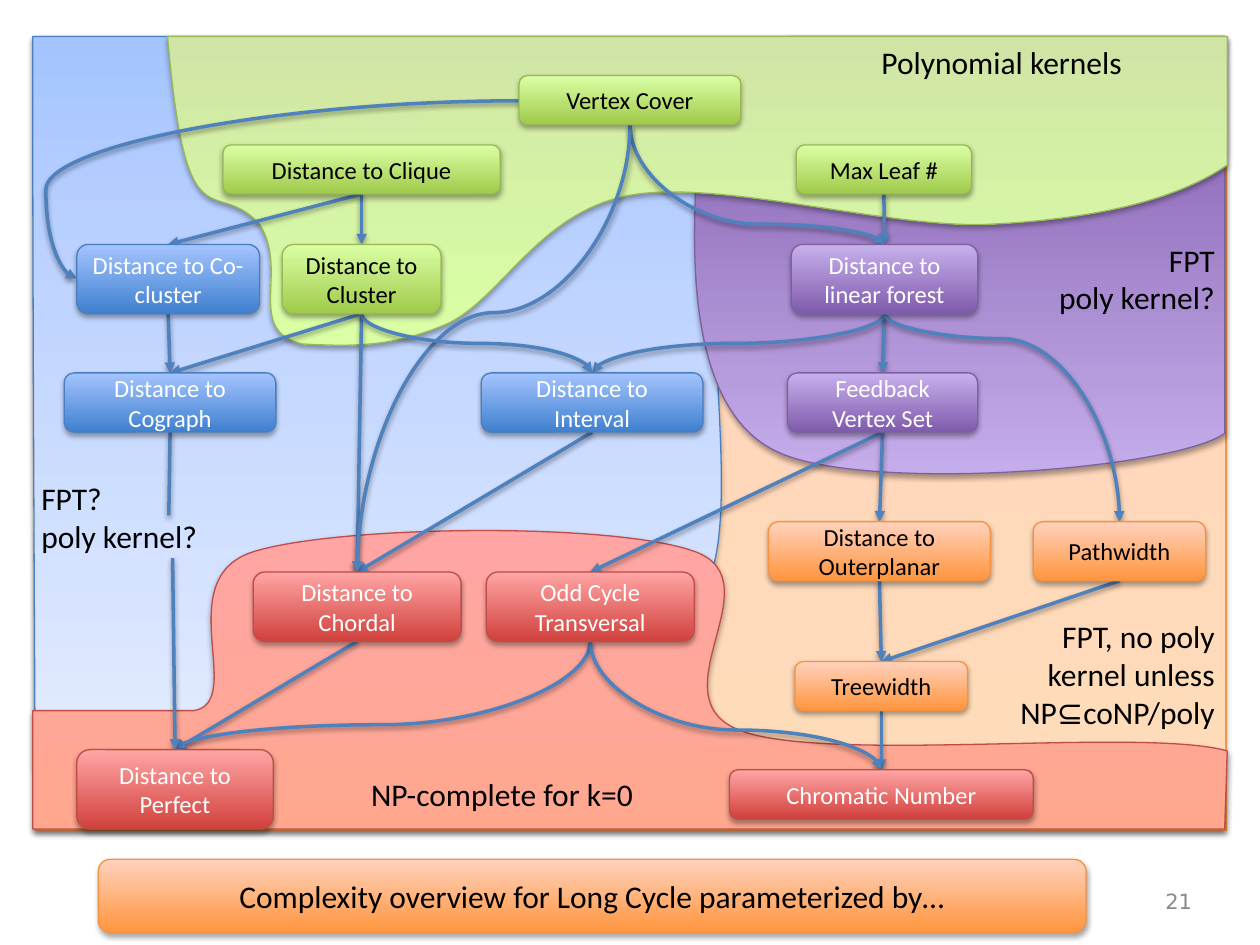
from collections import namedtuple

from lxml.etree import SubElement
from pptx import Presentation
from pptx.dml.color import RGBColor
from pptx.enum.shapes import MSO_CONNECTOR, MSO_SHAPE
from pptx.enum.text import MSO_ANCHOR, PP_ALIGN
from pptx.oxml.ns import qn
from pptx.util import Inches, Pt

COLS, ROWS = 10, 7.5
UP, DOWN = 90, 270
LEFT, MID, RIGHT = PP_ALIGN.LEFT, PP_ALIGN.CENTER, PP_ALIGN.RIGHT

# Tone: gradient start, gradient end, outline, text
TONES = {
    "green": ("A0CA4A", "DAFFA5", "98B955", "000000"),
    "blue": ("3F80CE", "A4C4FF", "4B7EBC", "FFFFFF"),
    "purple": ("7F5BAB", "C8B0ED", "7D60A0", "FFFFFF"),
    "orange": ("FF953E", "FFD2BD", "F69240", "000000"),
    "red": ("D1403C", "FFA6A5", "BF4C48", "FFFFFF"),
}

# Region: tone, gradient stops, direction, start, then lines (2) and curves (6)
REGIONS = [
    ("blue", [(0, "A4C4FF"), (35, "BFD4FF"), (100, "E6EEFF")], DOWN, (9.72, 1.23),
     [(9.72, 0.66, 9.72, 0.86, 9.72, 0.29), (0.26, 0.29),
      (0.26, 2.23, 0.27, 4.17, 0.28, 6.11), (0.95, 6.3, 3.47, 6.22, 4.37, 5.95),
      (5.27, 5.69, 5.4, 5.34, 5.65, 4.54), (5.9, 3.74, 5.41, 1.7, 5.88, 1.15),
      (6.35, 0.6, 8.02, 1.3, 8.45, 1.23)]),
    ("purple", [(0, "7F5BAB"), (100, "C8B0ED")], DOWN, (9.72, 3.44),
     [(9.72, 2.93, 9.72, 0.79, 9.72, 0.29), (6.28, 0.29),
      (5.49, 0.5, 5.53, 0.99, 5.52, 1.55), (5.5, 2.1, 5.48, 3.28, 6.18, 3.59),
      (6.88, 3.91, 9.3, 3.73, 9.72, 3.44)]),
    ("green", [(0, "D0E5A5"), (100, "DAFFA5")], DOWN, (9.74, 1.31),
     [(9.74, 0.81, 9.74, 0.79, 9.74, 0.29), (1.33, 0.29),
      (1.48, 2.01, 1.7, 1.38, 2.06, 1.78), (2.3, 2.15, 1.94, 2.62, 2.4, 2.73),
      (2.78, 2.75, 3.11, 2.76, 3.55, 2.57), (3.98, 2.37, 4.28, 1.68, 5, 1.55),
      (5.72, 1.42, 7.07, 1.82, 7.86, 1.78), (8.65, 1.74, 9.32, 1.6, 9.74, 1.31)]),
    ("red", [(0, "FFA78F"), (100, "FFA6A5")], UP, (0.26, 5.64),
     [(0.26, 6.21, 0.26, 6.01, 0.26, 6.58), (9.72, 6.58), (9.74, 5.96),
      (9.07, 5.77, 6.58, 6.06, 5.88, 5.8), (5.18, 5.54, 6.16, 4.62, 5.52, 4.38),
      (4.87, 4.14, 2.67, 4.17, 2.01, 4.38), (1.34, 4.59, 1.96, 5.57, 1.54, 5.64)]),
]

# Level: top, height, then nodes as (text, tone, left, width)
LEVELS = [
    (0.6, 0.39, [("Vertex Cover", "green", 4.12, 1.76)]),
    (1.15, 0.39, [("Distance to Clique", "green", 1.77, 2.2),
                  ("Max Leaf #", "green", 6.32, 1.39)]),
    (1.94, 0.55, [("Distance to Co-cluster", "blue", 0.61, 1.45),
                  ("Distance to Cluster", "green", 2.24, 1.26),
                  ("Distance to linear forest", "purple", 6.28, 1.48)]),
    (2.96, 0.47, [("Distance to Cograph", "blue", 0.51, 1.68),
                  ("Distance to Interval", "blue", 3.82, 1.76),
                  ("Feedback Vertex Set", "purple", 6.25, 1.51)]),
    (4.14, 0.47, [("Distance to Outerplanar", "orange", 6.1, 1.76),
                  ("Pathwidth", "orange", 8.2, 1.37)]),
    (4.54, 0.55, [("Distance to Chordal", "red", 2.01, 1.65),
                  ("Odd Cycle Transversal", "red", 3.86, 1.65)]),
    (5.25, 0.39, [("Treewidth", "orange", 6.31, 1.37)]),
    (5.95, 0.63, [("Distance to Perfect", "red", 0.61, 1.56)]),
    (6.11, 0.39, [("Chromatic Number", "red", 5.79, 2.41)]),
]

# Links name nodes by their last word
STRAIGHT = [
    ("forest", "Set"), ("Cluster", "Chordal"), ("Set", "Outerplanar"),
    ("Treewidth", "Number"), ("Interval", "Chordal"), ("Set", "Transversal"),
    ("Chordal", "Perfect"), ("Co-cluster", "Cograph"), ("Outerplanar", "Treewidth"),
    ("Pathwidth", "Treewidth"), ("Cluster", "Cograph"), ("Clique", "Cluster"),
    ("Clique", "Co-cluster"), ("#", "forest"),
]
CURVED = [
    ("Transversal", "Perfect", 0.77), ("forest", "Interval", 0.5),
    ("Transversal", "Number", 0.69), ("Cover", "forest", 0.83),
    ("forest", "Pathwidth", 0.12), ("Cover", "Chordal", 0.42),
    ("Cluster", "Interval", 0.5),
]

LABELS = [
    ("Polynomial kernels", MID, (6.18, 0.29, 3.54, 0.4)),
    ("NP-complete for k=0", MID, (2.32, 6.1, 3.33, 0.4)),
    ("FPT, no poly\nkernel unless\nNP⊆coNP/poly", RIGHT, (6.18, 4.85, 3.56, 1.01)),
    ("FPT\npoly kernel?", RIGHT, (6.18, 1.86, 3.56, 0.71)),
    ("FPT?\npoly kernel?", LEFT, (0.23, 3.75, 3.56, 0.71)),
]


class Grid(namedtuple("Grid", "x y w h")):
    """Columns and rows laid over a box."""

    def spot(self, col, row):
        return (int(self.x + self.w * col / COLS), int(self.y + self.h * row / ROWS))

    def cell(self, col, row, wide, high):
        return (*self.spot(col, row), int(self.w * wide / COLS), int(self.h * high / ROWS))


def tint(code):
    return RGBColor.from_string(code)


def shade(shape, alpha=35, dist=1.8):
    """Give a soft drop shadow."""
    fx = SubElement(shape.element.spPr, qn("a:effectLst"))
    drop = SubElement(fx, qn("a:outerShdw"), blurRad=str(Pt(3.1)), dist=str(Pt(dist)),
                      dir="5400000", rotWithShape="0")
    black = SubElement(drop, qn("a:srgbClr"), val="000000")
    SubElement(black, qn("a:alpha"), val=str(alpha * 1000))


def paint(shape, stops, edge, turn=UP):
    shape.fill.gradient()
    shape.fill.gradient_angle = turn
    marks = shape.element.spPr.find(qn("a:gradFill")).find(qn("a:gsLst"))
    marks.clear()
    for pos, code in stops:
        mark = SubElement(marks, qn("a:gs"), pos=str(pos * 1000))
        SubElement(mark, qn("a:srgbClr"), val=code)
    shape.line.color.rgb = tint(edge)
    shape.line.width = Pt(0.75)
    shade(shape)


def write(shape, text, size=18, color="000000", font="Calibri", align=MID,
          anchor=MSO_ANCHOR.MIDDLE):
    frame = shape.text_frame
    frame.word_wrap = True
    frame.vertical_anchor = anchor
    frame.text = text
    for para in frame.paragraphs:
        para.alignment = align
        para.font.size, para.font.name = Pt(size), font
        para.font.color.rgb = tint(color)


def panel(shapes, cell, text, tone, size=14):
    shape = shapes.add_shape(MSO_SHAPE.ROUNDED_RECTANGLE, *cell)
    low, high, edge, ink = TONES[tone]
    paint(shape, [(0, low), (100, high)], edge)
    write(shape, text, size=size, color=ink)
    return shape


def region(shapes, grid, tone, stops, turn, start, steps):
    pts = [grid.spot(*step[i:i + 2]) for step in steps for i in range(0, len(step), 2)]
    pen = shapes.build_freeform(*grid.spot(*start))
    pen.add_line_segments(pts, close=True)
    shape = pen.convert_to_shape()
    segs = iter(list(shape.element.iter(qn("a:lnTo"))))
    for step in steps:
        run = [next(segs) for _ in range(len(step) // 2)]
        if len(run) == 3:
            run[0].tag = qn("a:cubicBezTo")
            for seg in run[1:]:
                run[0].append(seg[0])
                seg.getparent().remove(seg)
    paint(shape, stops, TONES[tone][2], turn)


def link(shapes, kind, start, end, head=True):
    line = shapes.add_connector(kind, *start, *end)
    line.line.color.rgb = tint("4F81BD")
    line.line.width = Pt(2)
    if head:
        SubElement(line.element.spPr.find(qn("a:ln")), qn("a:tailEnd"), type="triangle")
    shade(line, alpha=38, dist=1.6)
    return line


def bend(line, share):
    """Set where a curve turns, as a share of its length."""
    av = line.element.spPr.find(qn("a:prstGeom")).find(qn("a:avLst"))
    SubElement(av, qn("a:gd"), name="adj1", fmla=f"val {round(share * 100000)}")


def drop(shapes, top, low, share):
    """Curve that leaves one node downwards and enters another from above."""
    x1, y1 = top.left + top.width // 2, top.top + top.height
    x2, y2 = low.left + low.width // 2, low.top
    midx, midy = (x1 + x2) // 2, (y1 + y2) // 2
    half, rise = (y2 - y1) // 2, abs(x2 - x1) // 2
    side = 1 if x2 > x1 else -1
    line = link(shapes, MSO_CONNECTOR.CURVE, (midx + side * half, midy - rise),
                (midx - side * half, midy + rise))
    turn = 270 if side > 0 else 90
    line.element.spPr.find(qn("a:xfrm")).set("rot", str(turn * 60000))
    bend(line, share)
    return line


def links(shapes, grid, nodes):
    straight, none = MSO_CONNECTOR.STRAIGHT, (0, 0)
    for top, low in STRAIGHT:
        line = link(shapes, straight, none, none)
        line.begin_connect(nodes[top], 2)
        line.end_connect(nodes[low], 0)
        yield line
    for top, low, share in CURVED:
        yield drop(shapes, nodes[top], nodes[low], share)
    side = link(shapes, MSO_CONNECTOR.CURVE, grid.spot(4.12, 0.8), grid.spot(0.61, 2.21))
    bend(side, 1.07)
    yield side
    upper = link(shapes, straight, none, grid.spot(1.34, 4.09), head=False)
    upper.begin_connect(nodes["Cograph"], 2)
    yield upper
    lower = link(shapes, straight, grid.spot(1.37, 4.43), none)
    lower.end_connect(nodes["Perfect"], 0)
    yield lower


def chart(shapes, grid):
    """Regions, nodes, links and labels of the parameter map."""
    back = shapes.add_shape(MSO_SHAPE.RECTANGLE, *grid.cell(0.28, 0.29, 9.45, 6.3))
    paint(back, [(0, "FFDCB9"), (100, "FFD2BD")], TONES["orange"][2])
    for item in REGIONS:
        region(shapes, grid, *item)
    nodes = {}
    for top, high, row in LEVELS:
        for text, tone, left, wide in row:
            cell = grid.cell(left, top, wide, high)
            nodes[text.split()[-1]] = panel(shapes, cell, text, tone)
    first = nodes["Cover"].element
    for line in links(shapes, grid, nodes):
        first.addprevious(line.element)
    for text, align, cell in LABELS:
        write(shapes.add_textbox(*grid.cell(*cell)), text, align=align, anchor=MSO_ANCHOR.TOP)


def footer(shapes, grid):
    panel(shapes, grid.cell(0.78, 6.82, 7.84, 0.58),
          "Complexity overview for Long Cycle parameterized by…", "orange", size=18)
    write(shapes.add_textbox(*grid.cell(7.23, 6.95, 2.33, 0.4)), "21", size=12,
          color="898989", font="DejaVu Sans", align=RIGHT)


def main():
    deck = Presentation()
    deck.slide_width, deck.slide_height = Inches(10), Inches(7.5)
    shapes = deck.slides.add_slide(deck.slide_layouts[6]).shapes
    grid = Grid(0, 0, deck.slide_width, deck.slide_height)
    chart(shapes, grid)
    footer(shapes, grid)
    deck.save("out.pptx")


if __name__ == "__main__":
    main()
